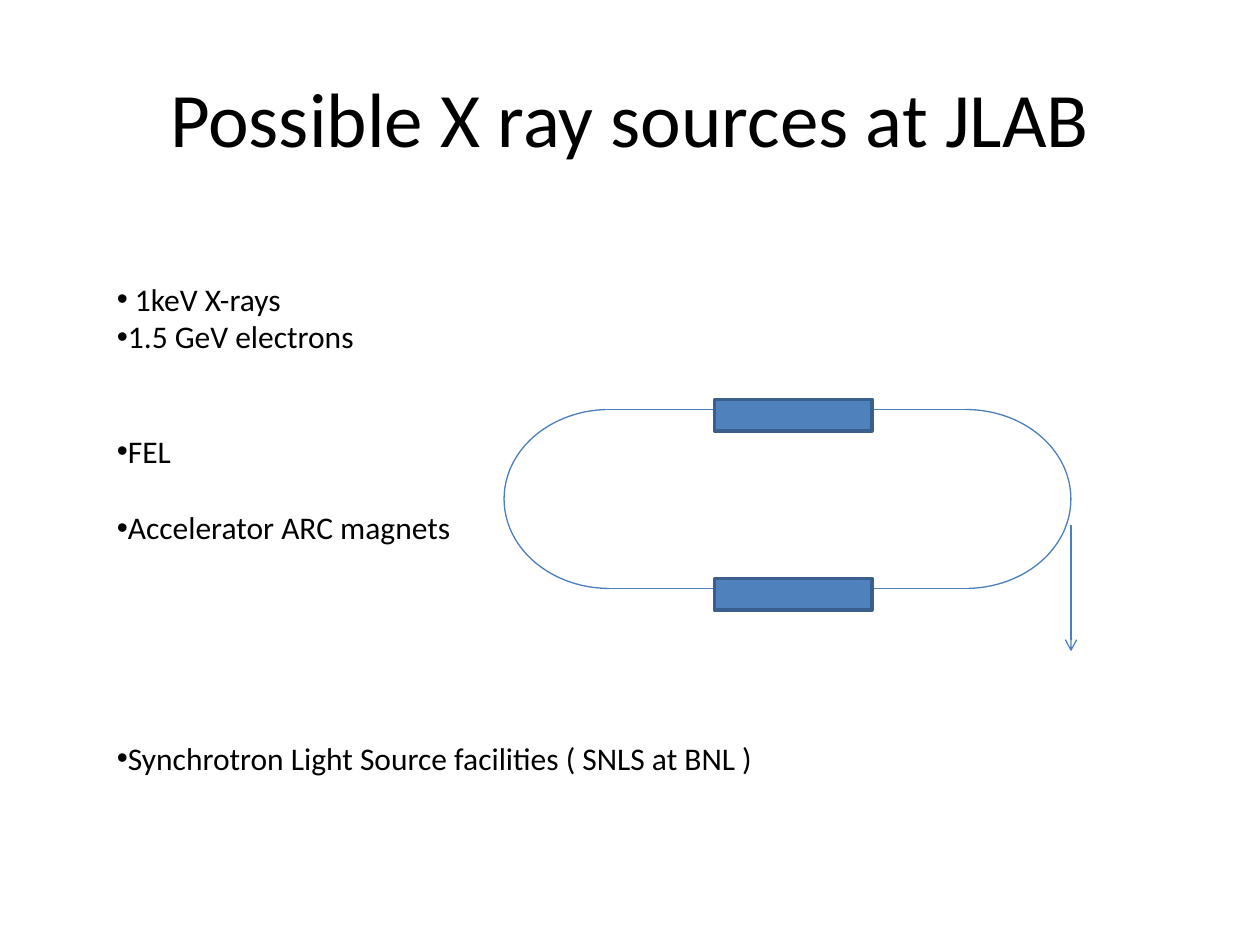
from lxml import etree
from pptx import Presentation
from pptx.dml.color import RGBColor
from pptx.enum.shapes import MSO_CONNECTOR, MSO_SHAPE
from pptx.enum.text import MSO_ANCHOR, PP_ALIGN
from pptx.oxml.ns import qn
from pptx.util import Inches, Pt

ARC, RECTANGLE = MSO_SHAPE.ARC, MSO_SHAPE.RECTANGLE
STRAIGHT = MSO_CONNECTOR.STRAIGHT
MIDDLE, TOP = MSO_ANCHOR.MIDDLE, MSO_ANCHOR.TOP
CENTER, LEFT = PP_ALIGN.CENTER, PP_ALIGN.LEFT


def color(hex_code):
    return RGBColor.from_string(hex_code)


class SlideBuilder:
    font = "Calibri"
    text = "000000"
    beam = "4B7EBC"
    magnet_fill = "4F81BD"
    magnet_edge = "3A5F8C"
    body_size = 18
    line_height = 22

    def __init__(self, slide):
        self.slide = slide

    def text_frame(self, left, top, width, height, anchor):
        box = self.slide.shapes.add_textbox(
            Inches(left), Inches(top), Inches(width), Inches(height))
        frame = box.text_frame
        frame.word_wrap = True
        frame.vertical_anchor = anchor
        return frame

    def set_text(self, paragraph, words, size, align):
        paragraph.text = words
        paragraph.alignment = align
        paragraph.font.name = self.font
        paragraph.font.size = Pt(size)
        paragraph.font.color.rgb = color(self.text)

    def title(self, words, *place):
        frame = self.text_frame(*place, MIDDLE)
        self.set_text(frame.paragraphs[0], words, 44, CENTER)

    def bullets(self, items, *place):
        """Each item is its words and the number of empty lines above it."""
        frame = self.text_frame(*place, TOP)
        for index, (words, lines_above) in enumerate(items):
            paragraph = frame.add_paragraph() if index else frame.paragraphs[0]
            self.set_text(paragraph, words, self.body_size, LEFT)
            paragraph.space_before = Pt(lines_above * self.line_height)
            properties = paragraph._p.get_or_add_pPr()
            etree.SubElement(properties, qn("a:buFont")).set("typeface", "Arial")
            etree.SubElement(properties, qn("a:buChar")).set("char", "•")
            # Child order: the bullet comes before the default run properties
            properties.append(properties.find(qn("a:defRPr")))

    def outline(self, item, hex_code, width):
        item.line.color.rgb = color(hex_code)
        item.line.width = Pt(width)

    def shape(self, kind, left, top, width, height):
        item = self.slide.shapes.add_shape(
            kind, Inches(left), Inches(top), Inches(width), Inches(height))
        item.shadow.inherit = False
        return item

    def bend(self, left, top, width, height, rotation=0):
        arc = self.shape(ARC, left, top, width, height)
        arc.adjustments[0] = 162
        arc.adjustments[1] = 52.64
        arc.rotation = rotation
        arc.fill.background()
        self.outline(arc, self.beam, 0.75)

    def magnet(self, *place):
        block = self.shape(RECTANGLE, *place)
        block.fill.solid()
        block.fill.fore_color.rgb = color(self.magnet_fill)
        self.outline(block, self.magnet_edge, 2)

    def beam_line(self, x1, y1, x2, y2, arrow=False):
        line = self.slide.shapes.add_connector(
            STRAIGHT, Inches(x1), Inches(y1), Inches(x2), Inches(y2))
        self.outline(line, self.beam, 0.75)
        properties = line._element.spPr
        if arrow:
            stroke = properties.find(qn("a:ln"))
            etree.SubElement(stroke, qn("a:tailEnd")).set("type", "arrow")
        etree.SubElement(properties, qn("a:effectLst"))


def main():
    presentation = Presentation()
    presentation.slide_width = Inches(10)
    presentation.slide_height = Inches(7.5)
    builder = SlideBuilder(
        presentation.slides.add_slide(presentation.slide_layouts[6]))

    # Title and list of sources
    builder.title("Possible X ray sources at JLAB", 0.5, 0.3, 9, 1.25)
    builder.bullets([
        (" 1keV X-rays", 0),
        ("1.5 GeV electrons", 0),
        ("FEL", 2),
        ("Accelerator ARC magnets", 1),
        ("Synchrotron Light Source facilities ( SNLS at BNL )", 5),
    ], 0.83, 2.17, 8.17, 4.04)

    # Accelerator ring: two bends joined by two straight sections
    ring_top, ring_bottom = 3.25, 4.67
    bend_width, ring_height = 1.67, ring_bottom - ring_top
    builder.bend(6.83, ring_top, bend_width, ring_height)
    builder.bend(4, ring_top, bend_width, ring_height, rotation=180)
    builder.beam_line(4.81, ring_top, 7.67, ring_top)
    builder.beam_line(4.83, ring_bottom, 7.69, ring_bottom)

    # X-ray beam leaving the right bend
    builder.beam_line(8.5, 4.17, 8.5, 5.17, arrow=True)

    # Magnets on the straight sections
    for section_y in (ring_top, ring_bottom):
        builder.magnet(5.67, section_y - 0.08, 1.25, 0.25)

    presentation.save("out.pptx")


if __name__ == "__main__":
    main()
